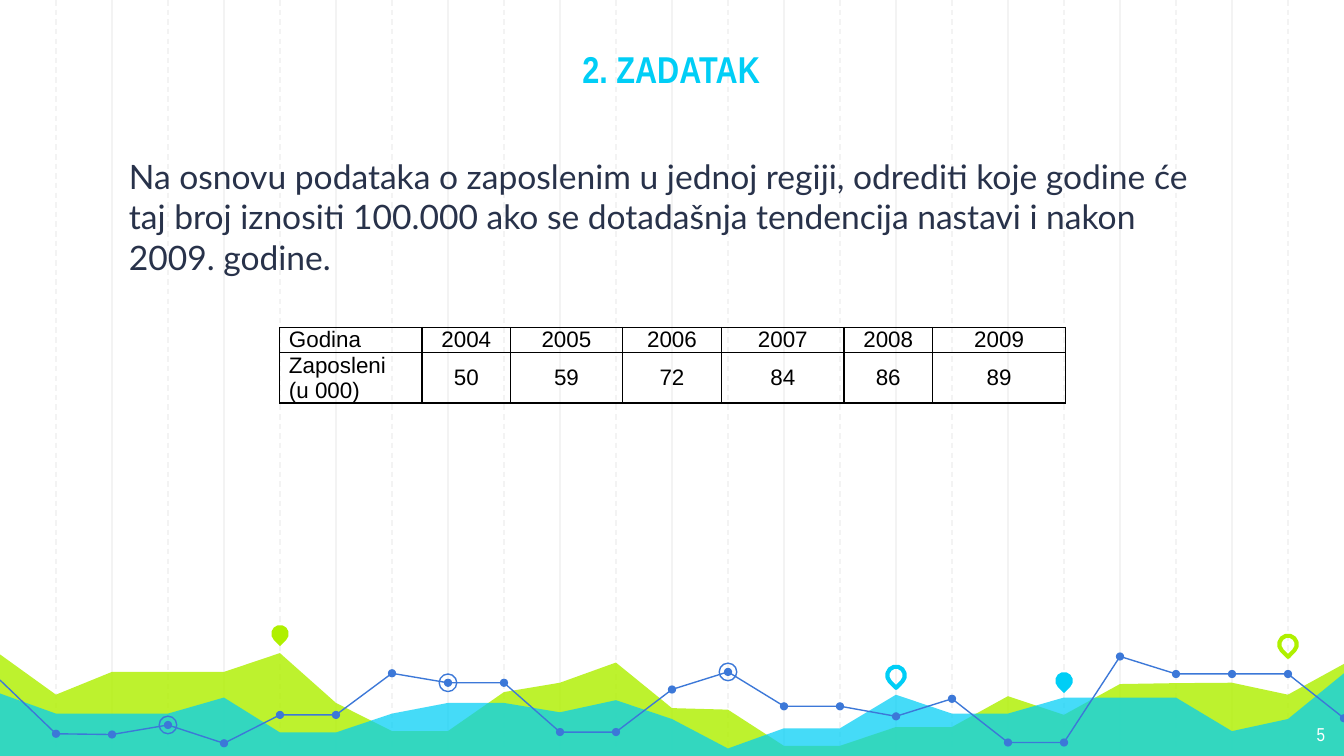
from lxml.etree import SubElement as Sub
from pptx import Presentation
from pptx.dml.color import RGBColor
from pptx.enum.dml import MSO_LINE
from pptx.enum.shapes import MSO_CONNECTOR, MSO_SHAPE as Form
from pptx.enum.text import MSO_ANCHOR as Anchor, MSO_AUTO_SIZE as Auto, PP_ALIGN as Align
from pptx.oxml.ns import qn
from pptx.util import Pt

WIDE, HIGH, STEP = 720, 405, 30
LIME, CYAN, BLUE, GRID, INK = "AFF000", "00CEF6", "3C78D8", "F3F3F3", "28324A"
DOT, RING = 4.4, 9.4
BACK = [350.6, 372.2, 360, 360, 360, 349.9, 376.6, 391.7, 391.7, 370.8, 365.8, 355, 379.4,
        380.2, 399.6, 399.6, 389.5, 389.5, 373, 383, 366.5, 366, 365.8, 372.2, 355.7]
FRONT = [371.5, 382.3, 382.3, 382.3, 373.7, 392.4, 392.4, 382.3, 376.6, 376.6, 381.6, 375.1, 385.2,
         401, 390.2, 390.2, 372.2, 382.3, 382.3, 373.7, 373.7, 373.7, 391.7, 385.2, 360.7]
TREND = [364.3, 393.1, 393.5, 388.4, 398.2, 383, 383, 360.7, 365.8, 365.8, 392.2, 392.2, 369.4,
         360, 378.4, 378.4, 383.8, 374.4, 397.8, 397.8, 351.7, 361.1, 361.1, 361.1, 384.8]
PINS = [(5, 339.5, LIME, True), (16, 361.8, CYAN, False), (19, 364.7, CYAN, True), (23, 345.2, LIME, False)]
ROWS = [["Godina", "2004", "2005", "2006", "2007", "2008", "2009"],
        ["Zaposleni\v(u 000)", "50", "59", "72", "84", "86", "89"]]
COLS = [76.3, 47.5, 59.8, 53.3, 65.5, 47.5, 71.3]
TASK = ("Na osnovu podataka o zaposlenim u jednoj regiji, odrediti koje godine će taj broj "
        "iznositi 100.000 ako se dotadašnja tendencija nastavi i nakon 2009. godine.")


def tint(code):
    return RGBColor.from_string(code)


def write(frame, text, size, font, color, bold=False, align=Align.LEFT):
    para = frame.paragraphs[0]
    para.text = text
    para.alignment = align
    para.space_before = Pt(0)
    for run in para.runs:
        run.font.size = Pt(size)
        run.font.name = font
        run.font.bold = bold
        run.font.color.rgb = tint(color)
    return para


def place(item, left, top, wide, high):
    item.left, item.top, item.width, item.height = Pt(left), Pt(top), Pt(wide), Pt(high)


def setup(frame, anchor=Anchor.TOP):
    frame.word_wrap = True
    frame.auto_size = Auto.NONE
    frame.vertical_anchor = anchor
    frame.margin_left = frame.margin_right = Pt(7.2)
    frame.margin_top = frame.margin_bottom = Pt(7.2)


def style(shape, fill=None, line=None, width=0.75, alpha=None):
    shape.shadow.inherit = False
    if fill:
        shape.fill.solid()
        shape.fill.fore_color.rgb = tint(fill)
        if alpha:
            node = shape.fill._xPr.find(".//" + qn("a:srgbClr"))
            Sub(node, qn("a:alpha"), val=str(alpha * 1000))
    else:
        shape.fill.background()
    if line:
        shape.line.color.rgb = tint(line)
        shape.line.width = Pt(width)
    else:
        shape.line.fill.background()


def rule(slide, col, dash):
    x = Pt(col * STEP)
    line = slide.shapes.add_connector(MSO_CONNECTOR.STRAIGHT, x, 0, x, Pt(HIGH))
    line.line.color.rgb = tint(GRID)
    line.line.width = Pt(0.75)
    if dash:
        line.line.dash_style = MSO_LINE.DASH
    Sub(line._element.spPr, qn("a:effectLst"))


def trace(slide, dots, close, **look):
    spots = [(Pt(x), Pt(y)) for x, y in dots]
    path = slide.shapes.build_freeform(*spots[0], scale=1.0)
    path.add_line_segments(spots[1:], close=close)
    style(path.convert_to_shape(), **look)


def area(slide, tops, color, alpha):
    edge = [(col * STEP, y) for col, y in enumerate(tops)]
    trace(slide, edge + [(WIDE, HIGH), (0, HIGH)], True, fill=color, alpha=alpha)


def mark(slide, form, col, y, size, **look):
    shape = slide.shapes.add_shape(form, Pt(col * STEP - size / 2), Pt(y - size / 2), Pt(size), Pt(size))
    style(shape, **look)
    return shape


def pin(slide, col, y, color, solid):
    look = {"fill": color} if solid else {"line": color, "width": 2.25}
    mark(slide, Form.TEAR, col, y, RING, **look).rotation = 135


def decor(slide):
    for start, dash in ((2, False), (1, True)):
        for col in range(start, 24, 2):
            rule(slide, col, dash)
    area(slide, BACK, LIME, 82)
    area(slide, FRONT, CYAN, 73)
    for spot in PINS:
        pin(slide, *spot)
    for first, last in ((0, 11), (11, 20), (20, 24)):
        trace(slide, [(col * STEP, TREND[col]) for col in range(first, last + 1)], False, line=BLUE)
    for col in range(1, 25):
        mark(slide, Form.OVAL, col, TREND[col], DOT, fill=BLUE)
    for col in (3, 8, 13):
        mark(slide, Form.OVAL, col, TREND[col], RING, line=BLUE)


def frame(cell):
    props = cell._tc.get_or_add_tcPr()
    for side in ("a:lnL", "a:lnR", "a:lnT", "a:lnB"):
        line = Sub(props, qn(side), w=str(Pt(0.75)))
        Sub(Sub(line, qn("a:solidFill")), qn("a:srgbClr"), val="000000")
    cell.fill.background()


def grid(slide):
    box = slide.shapes.add_table(2, len(COLS), Pt(149.8), Pt(175.5), Pt(sum(COLS)), Pt(40.2))
    table = box.table
    table.first_row = table.horz_banding = False
    for col, wide in zip(table.columns, COLS):
        col.width = Pt(wide)
    for row, high in zip(table.rows, (13.4, 26.8)):
        row.height = Pt(high)
    for r, row in enumerate(ROWS):
        for c, text in enumerate(row):
            cell = table.cell(r, c)
            cell.margin_left = cell.margin_right = Pt(5)
            cell.margin_top = cell.margin_bottom = 0
            cell.vertical_anchor = Anchor.MIDDLE if r and c else Anchor.TOP
            write(cell.text_frame, text, 12, "Arial", "000000", align=Align.CENTER if c else Align.LEFT)
            frame(cell)


def texts(slide):
    title, body = slide.shapes.title, slide.placeholders[1]
    num = slide.shapes.add_textbox(Pt(674), Pt(380), Pt(43), Pt(25))
    setup(num.text_frame)
    write(num.text_frame, "5", 10, "Arial Narrow", "FFFFFF", align=Align.RIGHT)
    place(body, 53.3, 76.3, 612, 270)
    setup(body.text_frame)
    para = write(body.text_frame, TASK, 18, "Lato", INK)
    props = para._p.get_or_add_pPr()
    props.set("marL", str(Pt(8.6)))
    props.set("indent", "0")
    Sub(props, qn("a:buNone"))
    place(title, 84.2, 0, 550.8, 56.2)
    setup(title.text_frame, Anchor.BOTTOM)
    write(title.text_frame, "2. ZADATAK", 20, "Arial Narrow", CYAN, bold=True, align=Align.CENTER)
    for item in (body, title):
        slide.shapes._spTree.append(item._element)


def main():
    deck = Presentation()
    deck.slide_width, deck.slide_height = Pt(WIDE), Pt(HIGH)
    slide = deck.slides.add_slide(deck.slide_layouts[1])
    decor(slide)
    texts(slide)
    grid(slide)
    deck.save("out.pptx")


if __name__ == "__main__":
    main()
